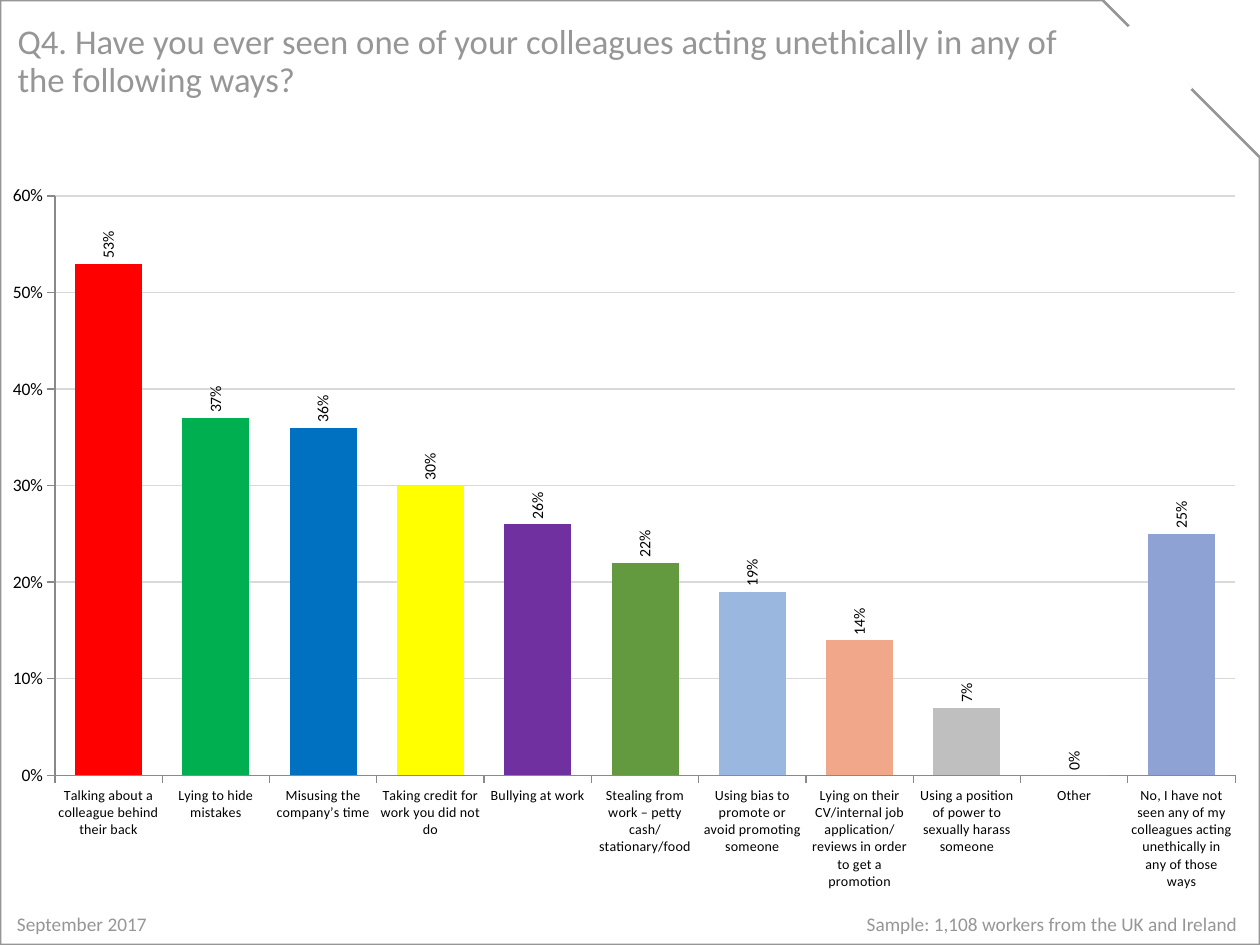
from dataclasses import dataclass

from lxml import etree
from pptx import Presentation
from pptx.chart.data import CategoryChartData
from pptx.dml.color import RGBColor
from pptx.enum.chart import XL_CHART_TYPE, XL_LABEL_POSITION, XL_TICK_MARK
from pptx.enum.shapes import MSO_CONNECTOR, MSO_SHAPE
from pptx.enum.text import MSO_ANCHOR
from pptx.oxml import parse_xml
from pptx.oxml.ns import nsdecls, qn
from pptx.util import Pt

COLUMN = XL_CHART_TYPE.COLUMN_CLUSTERED
ABOVE = XL_LABEL_POSITION.OUTSIDE_END
OUT = XL_TICK_MARK.OUTSIDE
NO_TICK = XL_TICK_MARK.NONE
LINE = MSO_CONNECTOR.STRAIGHT
SNIP = MSO_SHAPE.SNIP_1_RECTANGLE
MIDDLE = MSO_ANCHOR.MIDDLE
TOP = MSO_ANCHOR.TOP

ANSWERS = [
    ("Talking about a colleague behind their back", 0.53, "FF0000"),
    ("Lying to hide mistakes", 0.37, "00B050"),
    ("Misusing the company’s time", 0.36, "0070C0"),
    ("Taking credit for work you did not do", 0.30, "FFFF00"),
    ("Bullying at work", 0.26, "7030A0"),
    ("Stealing from work – petty cash/stationary/food", 0.22, "639A3F"),
    ("Using bias to promote or avoid promoting someone", 0.19, "9AB7DF"),
    ("Lying on their CV/internal job application/reviews in order to get a promotion",
     0.14, "F1A78A"),
    ("Using a position of power to sexually harass someone", 0.07, "BFBFBF"),
    ("Other", 0, "FFCD7F"),
    ("No, I have not seen any of my colleagues acting unethically in any of those ways",
     0.25, "8FA2D4"),
]


@dataclass(frozen=True)
class Theme:
    font: str = "Calibri"
    gray: str = "969696"
    white: str = "FFFFFF"
    black: str = "000000"
    grid: str = "D9D9D9"
    axis: str = "898989"
    title: float = 19.8
    foot: float = 11
    scale: float = 10
    label: float = 9
    answer: float = 8


class Page:
    def __init__(self, deck, theme):
        self.theme = theme
        self.slide = deck.slides.add_slide(deck.slide_layouts[6])
        self.shapes = self.slide.shapes

    def style(self, font, size, color):
        font.name = self.theme.font
        font.size = Pt(size)
        font.color.rgb = RGBColor.from_string(color)

    def stroke(self, line, color, width):
        line.color.rgb = RGBColor.from_string(color)
        line.width = Pt(width)

    def text(self, words, box, size, anchor=TOP, space=None, stop=None):
        frame = self.shapes.add_textbox(*map(Pt, box)).text_frame
        frame.word_wrap = True
        frame.vertical_anchor = anchor
        frame.text = words
        para = frame.paragraphs[0]
        para.line_spacing = space
        if stop:
            tabs = etree.SubElement(para._p.get_or_add_pPr(), qn("a:tabLst"))
            etree.SubElement(tabs, qn("a:tab"), pos=str(Pt(stop)), algn="r")
        for run in para.runs:
            self.style(run.font, size, self.theme.gray)

    def frame(self, box, width):
        shape = self.shapes.add_shape(SNIP, *map(Pt, box))
        shape.shadow.inherit = False
        shape.fill.background()
        self.stroke(shape.line, self.theme.gray, width)

    def line(self, ends, color, width):
        link = self.shapes.add_connector(LINE, *map(Pt, ends))
        self.stroke(link.line, color, width)
        etree.SubElement(link._element.spPr, qn("a:effectLst"))

    def chart(self, rows, box, plot_box):
        theme = self.theme
        data = CategoryChartData(number_format="0%")
        data.categories = [name for name, _, _ in rows]
        data.add_series("Series 1", [value for _, value, _ in rows])
        chart = self.shapes.add_chart(COLUMN, *map(Pt, box), data).chart
        chart.has_title = False
        chart.has_legend = False
        self.style(chart.font, theme.scale, theme.black)
        plot = chart.plots[0]
        plot.gap_width = 60
        plot.vary_by_categories = False
        series = plot.series[0]
        for spot, (_, _, color) in enumerate(rows):
            fill = series.points[spot].format.fill
            fill.solid()
            fill.fore_color.rgb = RGBColor.from_string(color)
        self.labels(series.data_labels)
        self.axes(chart)
        self.place(chart, plot_box)

    def labels(self, labels):
        labels.show_value = True
        labels.number_format = "0%"
        labels.number_format_is_linked = False
        labels.position = ABOVE
        self.style(labels.font, self.theme.label, self.theme.black)
        body = labels._element.find(".//" + qn("a:bodyPr"))
        body.set("rot", "-5400000")
        body.set("vert", "horz")

    def axes(self, chart):
        theme = self.theme
        sides = ((chart.category_axis, theme.answer), (chart.value_axis, theme.scale))
        for axis, size in sides:
            axis.major_tick_mark = OUT
            axis.minor_tick_mark = NO_TICK
            self.style(axis.tick_labels.font, size, theme.black)
            self.stroke(axis.format.line, theme.axis, 0.75)
        scale = chart.value_axis
        scale.minimum_scale = 0
        scale.maximum_scale = 0.6
        scale.major_unit = 0.1
        scale.tick_labels.number_format = "0%"
        scale.tick_labels.number_format_is_linked = False
        self.stroke(scale.major_gridlines.format.line, theme.grid, 0.75)

    def place(self, chart, box):
        area = chart._chartSpace.find(".//" + qn("c:plotArea"))
        for old in area.findall(qn("c:layout")):
            area.remove(old)
        sizes = "".join(f'<c:{key} val="{part}"/>' for key, part in zip("xywh", box))
        area.insert(0, parse_xml(
            f'<c:layout {nsdecls("c")}><c:manualLayout><c:layoutTarget val="inner"/>'
            f'<c:xMode val="edge"/><c:yMode val="edge"/>{sizes}'
            '</c:manualLayout></c:layout>'))


def main():
    theme = Theme()
    deck = Presentation()
    deck.slide_width, deck.slide_height = Pt(720), Pt(540)
    page = Page(deck, theme)
    page.text("September 2017\tSample: 1,108 workers from the UK and Ireland",
              (2.6, 517.7, 716, 21), theme.foot, stop=697.5)
    page.frame((0, 0, 720, 540), 1.5)
    page.line((645.8, 14.4, 679.7, 51.8), theme.white, 4.5)
    page.text("Q4. Have you ever seen one of your colleagues acting unethically "
              "in any of the following ways?",
              (3, 11.5, 634, 48), theme.title, anchor=MIDDLE, space=0.9)
    page.chart(ANSWERS, (3, 99.5, 710, 419), (0.04, 0.03, 0.95, 0.79))
    deck.save("out.pptx")


if __name__ == "__main__":
    main()
